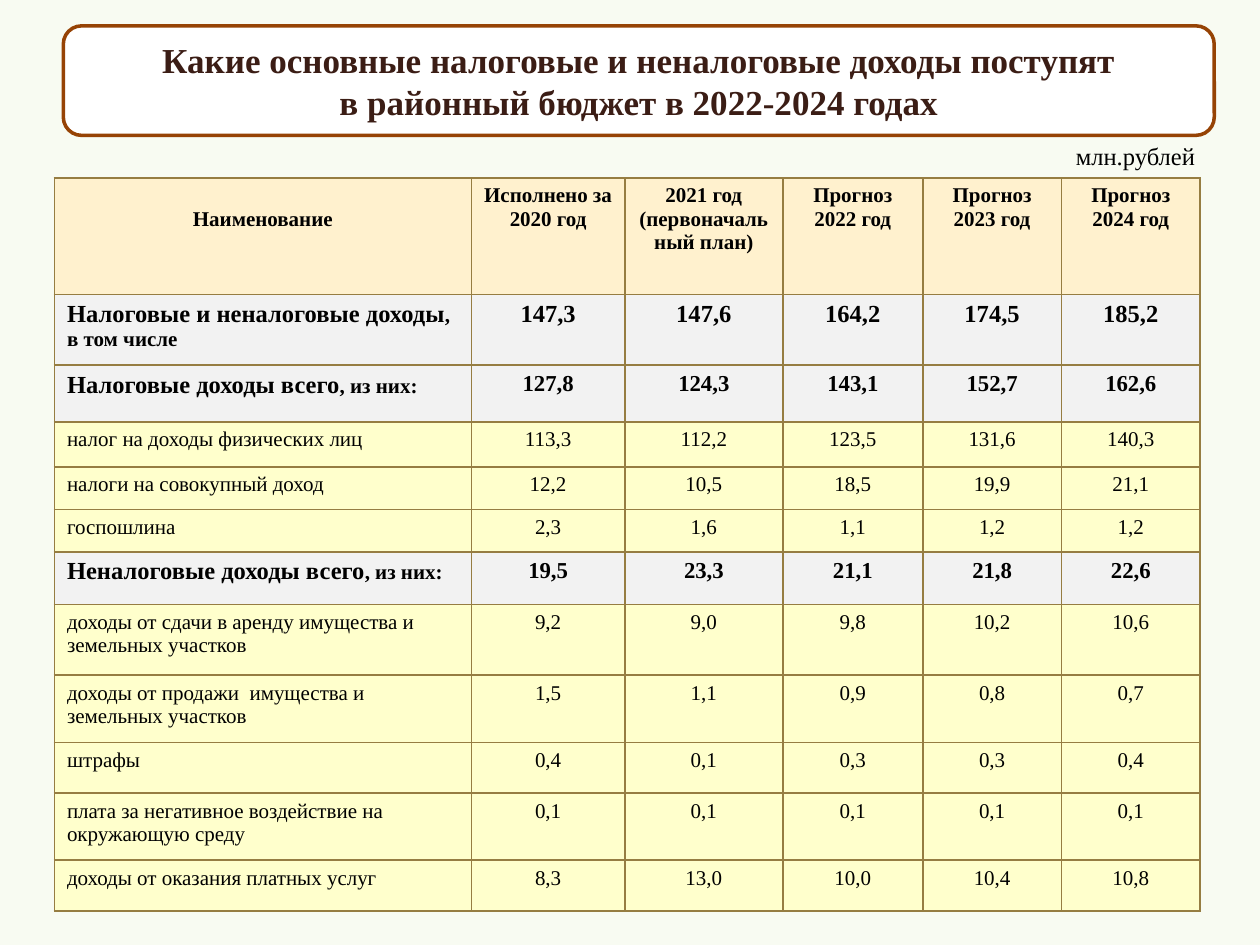
from lxml import etree
from pptx import Presentation
from pptx.dml.color import RGBColor
from pptx.enum.shapes import MSO_SHAPE
from pptx.enum.text import MSO_ANCHOR, PP_ALIGN
from pptx.oxml.ns import qn
from pptx.util import Pt

LEFT, CENTER = PP_ALIGN.LEFT, PP_ALIGN.CENTER
MIDDLE = MSO_ANCHOR.MIDDLE
ROUNDED = MSO_SHAPE.ROUNDED_RECTANGLE
FONT = "Times New Roman"
BORDER = "967D42"
HEADER_FILL, TOTAL_FILL, ITEM_FILL = "FFF1CE", "F2F2F2", "FFFFCC"


def color(value):
    return RGBColor.from_string(value)


def write(para, spans, align, bold=False, ink="000000"):
    """Fill a paragraph with (text, size) spans."""
    para.alignment = align
    for text, size in spans:
        span = para.add_run()
        span.text = text
        span.font.color.rgb = color(ink)
        for name, value in {"name": FONT, "size": Pt(size), "bold": bold}.items():
            setattr(span.font, name, value)


deck = Presentation()
deck.slide_width, deck.slide_height = Pt(720), Pt(540)
page = deck.slides.add_slide(deck.slide_layouts[6])
page.background.fill.solid()
page.background.fill.fore_color.rgb = color("F8FBF2")

# Revenue table: label spans, value size, values, row height
header = ["Наименование", "Исполнено за 2020 год", "2021 год (первоначальный план)",
          "Прогноз 2022 год", "Прогноз 2023 год", "Прогноз 2024 год"]
totals = {
    "Налоговые и неналоговые доходы": (", в том числе", 14),
    "Налоговые доходы всего": (", из них:", 13),
    "Неналоговые доходы всего": (", из них:", 13),
}
revenues = [
    ("Налоговые и неналоговые доходы", "147,3 147,6 164,2 174,5 185,2", 40.3),
    ("Налоговые доходы всего", "127,8 124,3 143,1 152,7 162,6", 32.5),
    ("налог на доходы физических лиц", "113,3 112,2 123,5 131,6 140,3", 25.7),
    ("налоги на совокупный доход", "12,2 10,5 18,5 19,9 21,1", 24.3),
    ("госпошлина", "2,3 1,6 1,1 1,2 1,2", 24.3),
    ("Неналоговые доходы всего", "19,5 23,3 21,1 21,8 22,6", 30),
    ("доходы от сдачи в аренду имущества и земельных участков",
     "9,2 9,0 9,8 10,2 10,6", 40.5),
    ("доходы от продажи  имущества и земельных участков",
     "1,5 1,1 0,9 0,8 0,7", 38.5),
    ("штрафы", "0,4 0,1 0,3 0,3 0,4", 28.9),
    ("плата за негативное воздействие на окружающую среду",
     "0,1 0,1 0,1 0,1 0,1", 38.3),
    ("доходы от оказания платных услуг", "8,3 13,0 10,0 10,4 10,8", 29.1),
]
widths = [238.3, 87.7, 90.3, 80, 79.2, 79.3]
heights = [66.7] + [height for _, _, height in revenues]

table = page.shapes.add_table(len(heights), len(widths), Pt(31.1), Pt(101.6),
                              Pt(sum(widths)), Pt(sum(heights))).table
table.first_row = table.horz_banding = False
for column, width in zip(table.columns, widths):
    column.width = Pt(width)
for row, height in zip(table.rows, heights):
    row.height = Pt(height)

for cell in table.iter_cells():
    properties = cell._tc.get_or_add_tcPr()
    for side in ("a:lnL", "a:lnR", "a:lnT", "a:lnB"):
        line = etree.SubElement(properties, qn(side), w=str(Pt(1)))
        fill = etree.SubElement(line, qn("a:solidFill"))
        etree.SubElement(fill, qn("a:srgbClr"), val=BORDER)
    cell.fill.solid()

for index, title in enumerate(header):
    cell = table.cell(0, index)
    cell.fill.fore_color.rgb = color(HEADER_FILL)
    write(cell.text_frame.paragraphs[0], [(title, 12)], CENTER, bold=True)
table.cell(0, 0).margin_top = Pt(17)

for number, (label, values, _) in enumerate(revenues, start=1):
    is_total = label in totals
    if is_total:
        suffix, value_size = totals[label]
        label_spans = [(label, 14), (suffix, 12)]
    else:
        value_size = 12
        label_spans = [(label, 12)]
    contents = [label_spans] + [[(value, value_size)] for value in values.split()]
    for index, spans in enumerate(contents):
        cell = table.cell(number, index)
        cell.fill.fore_color.rgb = color(TOTAL_FILL if is_total else ITEM_FILL)
        write(cell.text_frame.paragraphs[0], spans, CENTER if index else LEFT, is_total)

# Unit of measure
unit_box = page.shapes.add_textbox(Pt(607.7), Pt(77), Pt(87.1), Pt(24.2))
unit_box.text_frame.word_wrap = True
write(unit_box.text_frame.paragraphs[0], [("млн.рублей", 14)], LEFT)

# Title
title_box = page.shapes.add_shape(ROUNDED, Pt(36.2), Pt(14.8), Pt(657.7), Pt(62.6))
title_box.shadow.inherit = False
title_box.fill.solid()
title_box.fill.fore_color.rgb = color("FFFFFF")
title_box.line.color.rgb = color("964305")
title_box.line.width = Pt(2)
frame = title_box.text_frame
frame.word_wrap = True
frame.vertical_anchor = MIDDLE
title_lines = ["Какие основные налоговые и неналоговые доходы поступят",
               "в районный бюджет в 2022-2024 годах"]
for index, text in enumerate(title_lines):
    para = frame.add_paragraph() if index else frame.paragraphs[0]
    write(para, [(text, 20)], CENTER, bold=True, ink="3B1D15")

deck.save("out.pptx")
